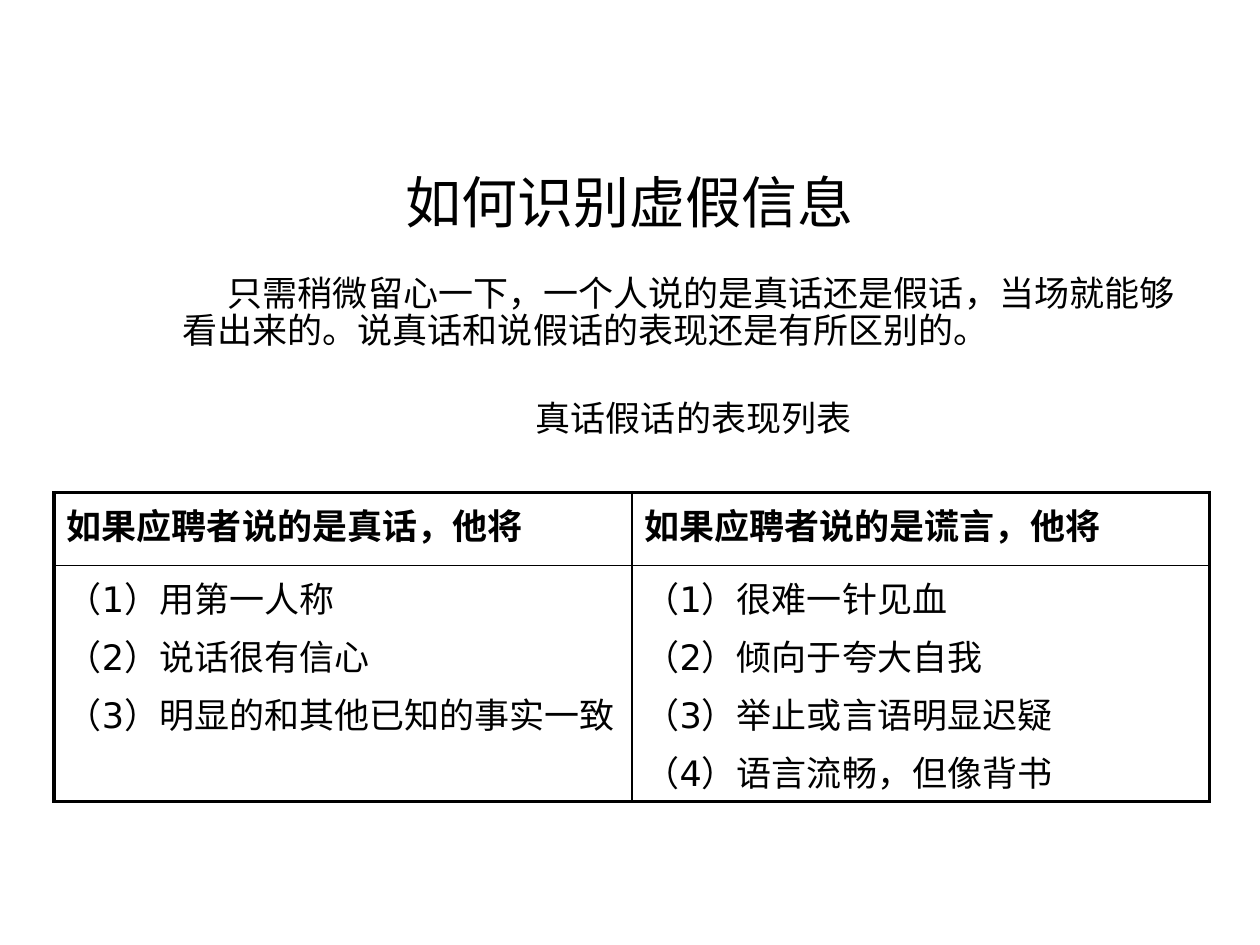
from dataclasses import dataclass

from lxml import etree
from pptx import Presentation
from pptx.dml.color import RGBColor
from pptx.enum.text import MSO_ANCHOR, PP_ALIGN
from pptx.oxml.ns import qn
from pptx.util import Inches, Pt

LEFT, CENTER = PP_ALIGN.LEFT, PP_ALIGN.CENTER
TOP, MIDDLE = MSO_ANCHOR.TOP, MSO_ANCHOR.MIDDLE


@dataclass(frozen=True)
class Theme:
    ink: str = "000000"
    text_font: str = "Calibri"
    table_font: str = "DejaVu Sans"
    title_size: float = 32
    body_size: float = 20
    para_gap: float = 4
    caption_gap: float = 28.5
    outer_line: float = 2.25
    inner_line: float = 1


THEME = Theme()

TITLE = "如何识别虚假信息"
INTRO = "只需稍微留心一下，一个人说的是真话还是假话，当场就能够看出来的。说真话和说假话的表现还是有所区别的。"
CAPTION = "真话假话的表现列表"
COLUMNS = [
    ("如果应聘者说的是真话，他将",
     ["用第一人称", "说话很有信心", "明显的和其他已知的事实一致"]),
    ("如果应聘者说的是谎言，他将",
     ["很难一针见血", "倾向于夸大自我", "举止或言语明显迟疑", "语言流畅，但像背书"]),
]


def write(frame, text, *, font=THEME.text_font, size=THEME.body_size, bold=False,
          align=LEFT, before=0, spacing=None, margin=0, indent=0, east_asian=True):
    """Fill the frame's empty first paragraph, or add another one after it."""
    para = frame.paragraphs[0]
    if para.runs:
        para = frame.add_paragraph()
    para.alignment = align
    para.space_before = Pt(before)
    if spacing:
        para.line_spacing = spacing
    properties = para._p.get_or_add_pPr()
    properties.set("marL", str(Inches(margin)))
    properties.set("indent", str(Inches(indent)))
    span = para.add_run()
    span.text = text
    span.font.name = font
    span.font.size = Pt(size)
    span.font.bold = bold
    span.font.color.rgb = RGBColor.from_string(THEME.ink)
    if east_asian:
        latin = span._r.get_or_add_rPr().find(qn("a:latin"))
        latin.addnext(latin.makeelement(qn("a:ea"), {"typeface": font}))


def add_text_frame(page, box, anchor=TOP):
    frame = page.shapes.add_textbox(*map(Inches, box)).text_frame
    frame.word_wrap = True
    frame.vertical_anchor = anchor
    return frame


def add_title(page, box):
    write(add_text_frame(page, box, MIDDLE), TITLE,
          size=THEME.title_size, align=CENTER)


def add_introduction(page, box):
    frame = add_text_frame(page, box)
    write(frame, INTRO, before=THEME.para_gap, spacing=0.9, margin=0.11, indent=0.36)
    write(frame, CAPTION, align=CENTER, before=THEME.caption_gap, spacing=0.9,
          margin=0.11, indent=0.04)


def set_borders(cell, outer_sides):
    """Draw all four sides, heavier on those at the table's edge."""
    properties = cell._tc.get_or_add_tcPr()
    for position, side in enumerate("LRTB"):
        width = THEME.outer_line if side in outer_sides else THEME.inner_line
        line = etree.Element(qn(f"a:ln{side}"), w=str(Pt(width)))
        fill = etree.SubElement(line, qn("a:solidFill"))
        etree.SubElement(fill, qn("a:srgbClr"), val=THEME.ink)
        properties.insert(position, line)


def add_comparison(page, box, row_heights):
    table = page.shapes.add_table(
        len(row_heights), len(COLUMNS), *map(Inches, box)).table
    for row, height in zip(table.rows, row_heights):
        row.height = Inches(height)
    for column, (heading, points) in enumerate(COLUMNS):
        table.columns[column].width = Inches(box[2] / len(COLUMNS))
        numbered = [f"（{number}）{point}" for number, point in enumerate(points, 1)]
        for row, lines in enumerate([[heading], numbered]):
            cell = table.cell(row, column)
            cell.fill.background()
            set_borders(cell, "LR"[column] + "TB"[row])
            for line in lines:
                write(cell.text_frame, line, font=THEME.table_font, bold=row == 0,
                      before=THEME.para_gap, east_asian=False)


def main():
    deck = Presentation()
    deck.slide_width, deck.slide_height = Inches(10), Inches(7.5)
    page = deck.slides.add_slide(deck.slide_layouts[6])
    add_title(page, (0.75, 1.28, 8.5, 0.63))
    add_introduction(page, (1.24, 2.14, 8.38, 1.47))
    add_comparison(page, (0.43, 3.91, 9.17, 2.45), (0.58, 1.87))
    deck.save("out.pptx")


if __name__ == "__main__":
    main()
